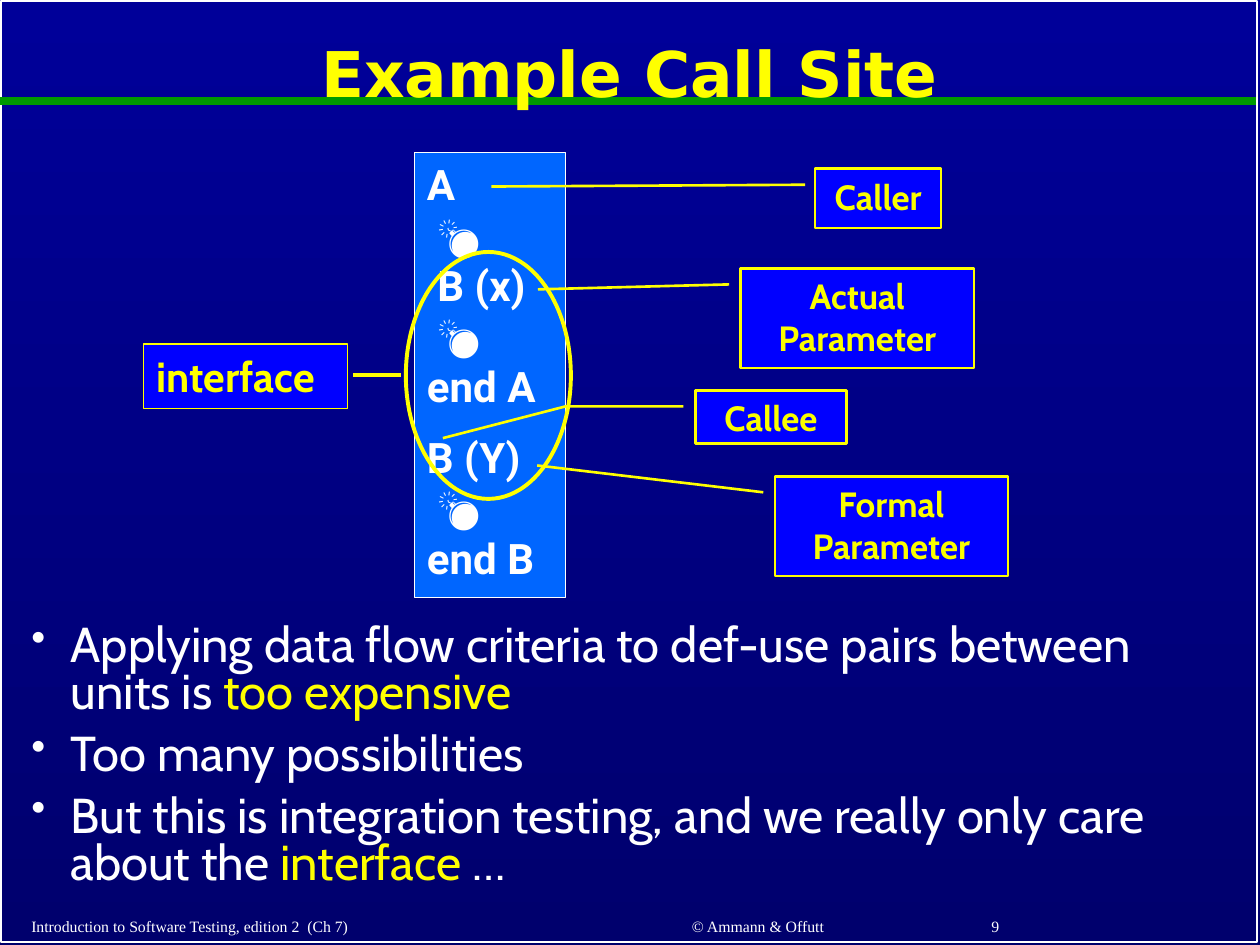
import collections

import pptx
import pptx.dml.color
import pptx.enum.shapes
import pptx.enum.text
import pptx.oxml.xmlchemy
import pptx.util

Pt = pptx.util.Pt
RGBColor = pptx.dml.color.RGBColor
OxmlElement = pptx.oxml.xmlchemy.OxmlElement
SHAPE = pptx.enum.shapes.MSO_SHAPE
ALIGN = pptx.enum.text.PP_ALIGN
ANCHOR = pptx.enum.text.MSO_ANCHOR

SKY_TOP = RGBColor(0x00, 0x00, 0x99)
SKY_BOTTOM = RGBColor(0x00, 0x00, 0x6D)
WHITE = RGBColor(0xFF, 0xFF, 0xFF)
YELLOW = RGBColor(0xFF, 0xFF, 0x00)
LABEL_YELLOW = RGBColor(0xFA, 0xFD, 0x00)
GREEN = RGBColor(0x00, 0x99, 0x00)
CODE_BLUE = RGBColor(0x00, 0x66, 0xFF)
LABEL_BLUE = RGBColor(0x00, 0x00, 0xFF)

Box = collections.namedtuple("Box", "left top width height")
Style = collections.namedtuple("Style", "font size color bold")

TITLE = Style("DejaVu Sans", 36, YELLOW, True)
CODE = Style("Roboto", 24, WHITE, True)
LABEL = Style("Cabin", 20, LABEL_YELLOW, True)
INTERFACE = Style("Cabin", 24, YELLOW, True)
BODY = Style("Cabin", 28, WHITE, False)
EMPHASIS = BODY._replace(color=YELLOW)
FOOTER = Style("Times New Roman", 9, WHITE, False)


def inner(box, left, top, width, height):
    """Return a box placed relative to the corner of another."""
    return Box(box.left + left, box.top + top, width, height)


def add_run(paragraph, text, style):
    """Append one styled run."""
    run = paragraph.add_run()
    run.text = text
    run.font.name = style.font
    run.font.size = Pt(style.size)
    run.font.bold = style.bold
    run.font.color.rgb = style.color


def add_outline(slide, kind, box, line_color, line_width, fill=None):
    """Add a preset shape with a line and an optional fill."""
    shape = slide.shapes.add_shape(kind, *map(Pt, box))
    shape.shadow.inherit = False
    if fill is None:
        shape.fill.background()
    else:
        shape.fill.solid()
        shape.fill.fore_color.rgb = fill
    shape.line.color.rgb = line_color
    shape.line.width = Pt(line_width)
    shape.text_frame.word_wrap = True
    shape.text_frame.vertical_anchor = ANCHOR.TOP
    return shape


def add_line(slide, start, end, color, width):
    """Add a straight line without shadow."""
    line = slide.shapes.add_connector(
        pptx.enum.shapes.MSO_CONNECTOR.STRAIGHT, *map(Pt, start + end))
    line.line.color.rgb = color
    line.line.width = Pt(width)
    line._element.spPr.append(OxmlElement("a:effectLst"))


def add_text(slide, box, text, style, align):
    """Add a vertically centred single-line text box."""
    frame = slide.shapes.add_textbox(*map(Pt, box)).text_frame
    frame.word_wrap = True
    frame.vertical_anchor = ANCHOR.MIDDLE
    paragraph = frame.paragraphs[0]
    paragraph.alignment = align
    add_run(paragraph, text, style)
    return paragraph


def draw_backdrop(slide, box):
    """Paint the gradient, the frame and the green rule."""
    fill = slide.background.fill
    fill.gradient()
    fill.gradient_angle = 270
    for stop, color in zip(fill.gradient_stops, (SKY_TOP, SKY_BOTTOM)):
        stop.color.rgb = color
    add_outline(slide, SHAPE.RECTANGLE, box, WHITE, 1)
    rule_y = box.top + 56.9
    add_line(slide, (0, rule_y), (box.width, rule_y), GREEN, 4.5)


def draw_footer(slide, box):
    """Place the book name, the authors and the page number."""
    parts = (
        (0, 296, "Introduction to Software Testing, edition 2  (Ch 7)", ALIGN.LEFT),
        (308.2, 228.2, "© Ammann & Offutt", ALIGN.CENTER),
        (548.6, 149.8, "9", ALIGN.LEFT),
    )
    for left, width, text, align in parts:
        add_text(slide, inner(box, left, 0, width, box.height), text, FOOTER, align)


def draw_title(slide, box):
    """Place the slide title."""
    add_text(slide, box, "Example Call Site", TITLE, ALIGN.CENTER).line_spacing = 0.9


def draw_code(slide, box):
    """Draw the panel with the two program units."""
    units = (("A", " 💣", " B (x)", " 💣", "end A"), ("B (Y)", " 💣", "end B"))
    panel = add_outline(slide, SHAPE.RECTANGLE, box, WHITE, 0.75, CODE_BLUE)
    frame = panel.text_frame
    for unit_index, unit in enumerate(units):
        paragraph = frame.add_paragraph() if unit_index else frame.paragraphs[0]
        paragraph.alignment = ALIGN.LEFT
        paragraph.space_before = Pt(12 * unit_index)
        for line_index, text in enumerate(unit):
            if line_index:
                paragraph.add_line_break()
            add_run(paragraph, text, CODE)


def draw_callouts(slide, box):
    """Draw the labels whose leaders point into the code."""
    one, two = SHAPE.LINE_CALLOUT_1, SHAPE.LINE_CALLOUT_2
    callouts = (
        ("Caller", one, (68.4, 0, 72, 33.8), (0.27, -0.08, 0.3, -2.57)),
        ("Actual Parameter", one, (25.9, 56.9, 133.2, 56.9), (0.16, -0.05, 0.21, -0.87)),
        ("Formal Parameter", one, (45.4, 175.7, 133.2, 56.9), (0.16, -0.05, -0.11, -1.02)),
        ("Callee", two, (0, 126.7, 86.4, 30.2), (0.3, -0.08, 0.3, -0.86, 0.9, -1.67)),
    )
    for text, kind, place, leader in callouts:
        callout = add_outline(slide, kind, inner(box, *place), YELLOW, 1.5, LABEL_BLUE)
        for index, value in enumerate(leader):
            callout.adjustments[index] = value
        paragraph = callout.text_frame.paragraphs[0]
        paragraph.alignment = ALIGN.CENTER
        add_run(paragraph, text, LABEL)


def draw_interface(slide, box):
    """Circle the call interface and label it at the left."""
    label_box = inner(box, 0, 52.6, 116.6, 36.7)
    label = add_outline(slide, SHAPE.RECTANGLE, label_box, YELLOW, 0.75, LABEL_BLUE)
    paragraph = label.text_frame.paragraphs[0]
    paragraph.alignment = ALIGN.LEFT
    add_run(paragraph, "interface", INTERFACE)
    ring_left = box.width - 94.3
    add_outline(slide, SHAPE.OVAL, inner(box, ring_left, 0, 94.3, box.height), YELLOW, 2.25)
    middle = box.top + box.height / 2
    add_line(slide, (box.left + ring_left - 2.9, middle),
             (box.left + label_box.width + 2.9, middle), YELLOW, 2.25)


def draw_bullets(slide, box):
    """Write the three bullet points."""
    points = (
        (("Applying data flow criteria to def-use pairs between units is ", BODY),
         ("too expensive", EMPHASIS)),
        (("Too many possibilities", BODY),),
        (("But this is integration testing, and we really only care about the ", BODY),
         ("interface", EMPHASIS), (" …", BODY)),
    )
    frame = slide.shapes.add_textbox(*map(Pt, box)).text_frame
    frame.word_wrap = True
    for index, point in enumerate(points):
        paragraph = frame.add_paragraph() if index else frame.paragraphs[0]
        paragraph.line_spacing = 0.8
        paragraph.space_before = Pt(8.4 if index else 0)
        properties = paragraph._p.get_or_add_pPr()
        properties.set("marL", str(Pt(22.5)))
        properties.set("indent", str(-Pt(22.5)))
        for tag, key, value in (("a:buSzPct", "val", "85000"), ("a:buChar", "char", "•")):
            bullet = OxmlElement(tag)
            bullet.set(key, value)
            properties.append(bullet)
        for text, style in point:
            add_run(paragraph, text, style)


def main():
    """Build the slide and save it."""
    deck = pptx.Presentation()
    deck.slide_width, deck.slide_height = Pt(720), Pt(540)
    slide = deck.slides.add_slide(deck.slide_layouts[6])
    draw_backdrop(slide, Box(0.7, 0.7, 717.8, 537.8))
    draw_title(slide, Box(9.4, 7.9, 700.6, 72))
    draw_code(slide, Box(236.9, 87.1, 86.4, 254.2))
    draw_callouts(slide, Box(397.4, 96.5, 178.6, 232.6))
    draw_interface(slide, Box(82.1, 144, 244.1, 141.1))
    draw_bullets(slide, Box(10.8, 353.5, 698.4, 148.3))
    draw_footer(slide, Box(10.8, 519.5, 698.4, 19))
    deck.save("out.pptx")


if __name__ == "__main__":
    main()
